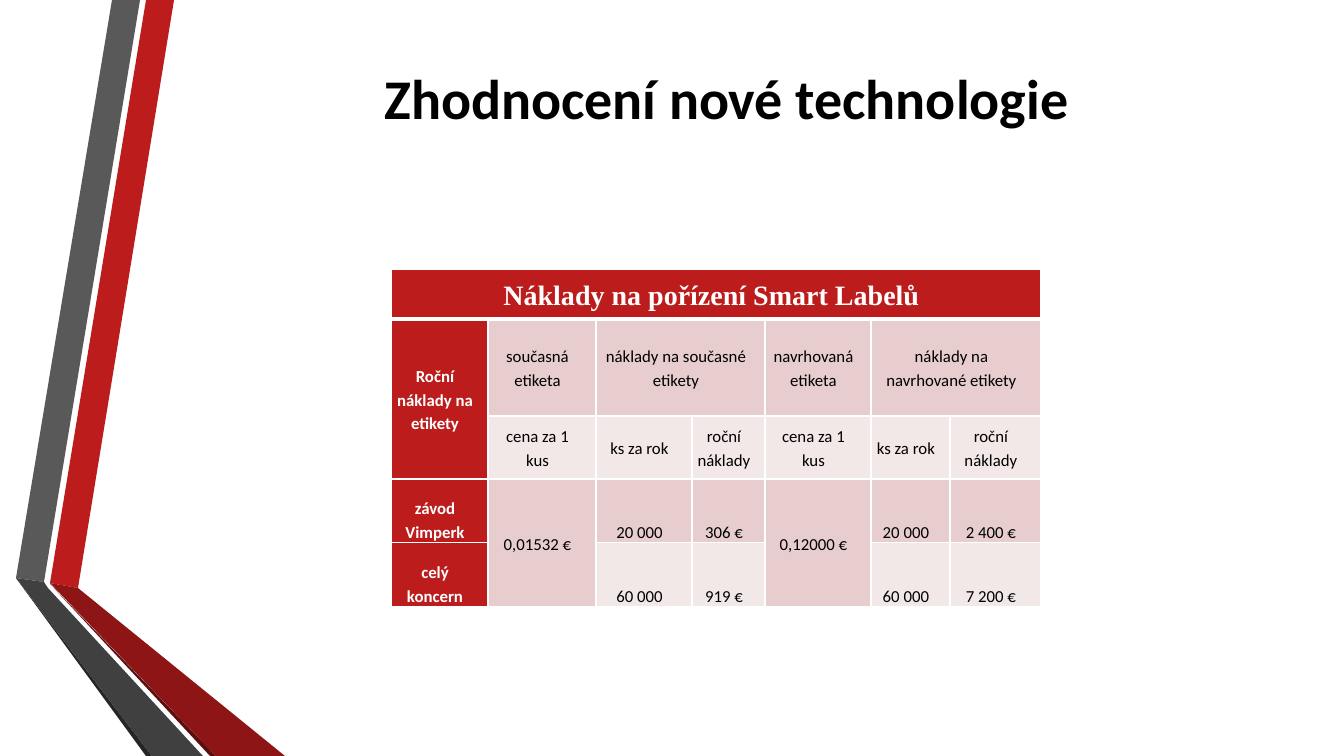
import pptx
import pptx.util
import pptx.dml.color
import pptx.enum.text
import pptx.oxml
import pptx.oxml.ns

SCALE = 914400 / 100.8
COLOURS = {
    "red": "BC1C1C",
    "red_fold": "8D1515",
    "red_shade": "5E0E0E",
    "grey": "595959",
    "grey_fold": "404040",
    "grey_shade": "262626",
    "band_dark": "E7CDCD",
    "band_light": "F3E8E8",
    "white": "FFFFFF",
    "black": "000000",
}
RIBBONS = [
    ("red", [(50, 583), (78, 588), (174, 0), (146, 0)]),
    ("grey", [(140, 0), (112, 0), (16, 578), (44, 582)]),
    ("grey_shade", [(16, 578), (146, 756), (152, 756)]),
    ("red_shade", [(50, 584), (210, 756), (216, 756)]),
    ("red_fold", [(50, 583), (216, 756), (285, 756), (78, 588)]),
    ("grey_fold", [(203, 756), (48, 588), (44, 582), (16, 578), (152, 756)]),
]
COLUMN_WIDTHS = [97, 108, 96, 73, 106, 79, 91]
ROW_HEIGHTS = [50, 97, 63, 64, 64]
COSTS = [
    ["Náklady na pořízení Smart Labelů", "", "", "", "", "", ""],
    ["Roční náklady na etikety", "současná etiketa", "náklady na současné etikety", "",
     "navrhovaná etiketa", "náklady na navrhované etikety", ""],
    ["", "cena za 1 kus", "ks za rok", "roční náklady",
     "cena za 1 kus", "ks za rok", "roční náklady"],
    ["závod Vimperk", "0,01532 €", "20 000", "306 €", "0,12000 €", "20 000", "2 400 €"],
    ["celý koncern", "", "60 000", "919 €", "", "60 000", "7 200 €"],
]
MERGES = [
    ((0, 0), (0, 6)),
    ((1, 0), (2, 0)),
    ((1, 2), (1, 3)),
    ((1, 5), (1, 6)),
    ((3, 1), (4, 1)),
    ((3, 4), (4, 4)),
]
PRICE_COLUMNS = (1, 4)
CELL_MARGINS = {"margin_left": 5, "margin_top": 0, "margin_right": 14, "margin_bottom": 0}
ANCHOR = pptx.enum.text.MSO_ANCHOR
CENTRE = pptx.enum.text.PP_ALIGN.CENTER


def px(length):
    return pptx.util.Emu(round(length * SCALE))


def colour(name):
    return pptx.dml.color.RGBColor.from_string(COLOURS[name])


def set_values(target, values):
    for name, value in values.items():
        setattr(target, name, value)


def fill_with(target, name):
    target.fill.solid()
    target.fill.fore_color.rgb = colour(name)


def write_text(frame, text, font, size, bold, name, spacing):
    para = frame.paragraphs[0]
    set_values(para, {"alignment": CENTRE, "line_spacing": spacing})
    span = para.add_run()
    span.text = text
    set_values(span.font, {"name": font, "size": pptx.util.Pt(size), "bold": bold})
    span.font.color.rgb = colour(name)


def add_ribbon(page, name, points):
    builder = page.shapes.build_freeform(*points[0], scale=SCALE)
    builder.add_line_segments(points[1:], close=True)
    ribbon = builder.convert_to_shape()
    ribbon.shadow.inherit = False
    fill_with(ribbon, name)
    ribbon.line.fill.background()


def add_title(page, text):
    box = page.shapes.add_textbox(px(174), px(0), px(1105), px(194))
    set_values(box.text_frame, {"word_wrap": True, "vertical_anchor": ANCHOR.MIDDLE})
    write_text(box.text_frame, text, "Calibri", 40, True, "black", 1.0)


def add_borders(cell, row):
    widths = {"L": 1, "R": 1, "T": 3 if row == 1 else 1, "B": 3 if row == 0 else 1}
    properties = cell._tc.get_or_add_tcPr()
    for side, width in widths.items():
        properties.append(pptx.oxml.parse_xml(
            f'<a:ln{side} {pptx.oxml.ns.nsdecls("a")} w="{pptx.util.Pt(width)}">'
            f'<a:solidFill><a:srgbClr val="{COLOURS["white"]}"/></a:solidFill></a:ln{side}>'
        ))


def format_cell(cell, row, column, text):
    heading = row == 0 or column == 0
    low = row >= 3 and column not in PRICE_COLUMNS
    add_borders(cell, row)
    fill_with(cell, "red" if heading else "band_dark" if row % 2 else "band_light")
    set_values(cell, {name: px(value) for name, value in CELL_MARGINS.items()})
    cell.vertical_anchor = ANCHOR.BOTTOM if low else ANCHOR.MIDDLE
    if text:
        font, size = ("Times New Roman", 20) if row == 0 else ("Calibri", 12)
        write_text(cell.text_frame, text, font, size, heading,
                   "white" if heading else "black", 1.15)


def add_cost_table(page):
    frame = page.shapes.add_table(
        len(ROW_HEIGHTS), len(COLUMN_WIDTHS), px(391), px(269),
        px(sum(COLUMN_WIDTHS)), px(sum(ROW_HEIGHTS)))
    table = frame.table
    set_values(table, {"first_row": False, "horz_banding": False})
    for column, width in zip(table.columns, COLUMN_WIDTHS):
        column.width = px(width)
    for row, height in zip(table.rows, ROW_HEIGHTS):
        row.height = px(height)
    for first, last in MERGES:
        table.cell(*first).merge(table.cell(*last))
    for row, texts in enumerate(COSTS):
        for column, text in enumerate(texts):
            format_cell(table.cell(row, column), row, column, text)


def main():
    deck = pptx.Presentation()
    set_values(deck, {"slide_width": px(1344), "slide_height": px(756)})
    page = deck.slides.add_slide(deck.slide_layouts[6])
    for name, points in RIBBONS:
        add_ribbon(page, name, points)
    add_cost_table(page)
    add_title(page, "Zhodnocení nové technologie")
    deck.save("out.pptx")


if __name__ == "__main__":
    main()
